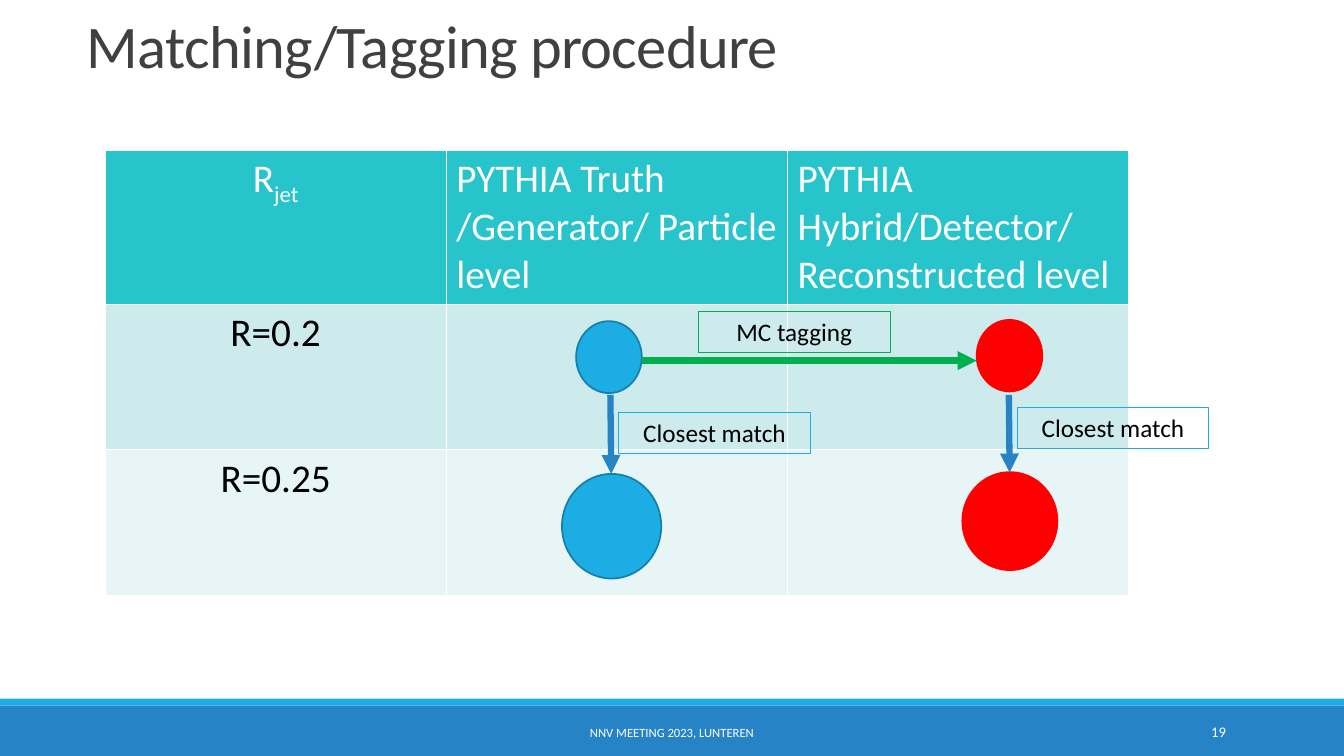
from pptx import Presentation
from pptx.dml.color import RGBColor
from pptx.enum.shapes import MSO_CONNECTOR, MSO_SHAPE
from pptx.enum.text import MSO_ANCHOR, MSO_AUTO_SIZE, PP_ALIGN
from pptx.oxml.ns import qn
from pptx.util import Pt
from lxml.etree import SubElement

WIDE, HIGH = 960, 540
FONT = "Calibri"
WHITE, BLACK, BLUE, SKY = "FFFFFF", "000000", "2683C6", "1CADE4"
RIM, RED, GREEN = "1580A9", "FF0000", "00B050"

TITLE = "Matching/Tagging procedure"
ROWS = [
    ("28C4CC", WHITE, ["R", "PYTHIA Truth /Generator/ Particle level",
                       "PYTHIA Hybrid/Detector/ Reconstructed level"]),
    ("CDEAEC", BLACK, ["R=0.2", "", ""]),
    ("E8F5F6", BLACK, ["R=0.25", "", ""]),
]
GRID = (75, 107.5, 243.8, 104)
BARS = [(504, 36, BLUE), (499, 5, SKY)]
JETS = [
    (411.5, 229.4, 46.9, 51.4, SKY, RIM),
    (401.4, 338.5, 70.9, 74.7, SKY, RIM),
    (697.6, 228.5, 46.9, 51.1, RED, RED),
    (687.4, 337.3, 67.9, 69.9, RED, RED),
]
ARROWS = [
    (720.6, 282, 721.2, 337.5, BLUE),
    (436, 282, 436.6, 338.5, BLUE),
    (458.5, 257.6, 697.6, 257.6, GREEN),
]
TAGS = [
    ("MC tagging", 498.8, 222.4, GREEN),
    ("Closest match", 441.9, 294.6, SKY),
    ("Closest match", 726.5, 291, SKY),
]
TAG_SIZE = (137, 29.1)
NOTES = [
    ("NNV MEETING 2023, LUNTEREN", 290.2, 379.4, 9, PP_ALIGN.CENTER),
    ("19", 779.8, 103, 10.5, PP_ALIGN.RIGHT),
]


def paint(part, color):
    part.solid()
    part.fore_color.rgb = RGBColor.from_string(color)


def style(frame, size, color, align=PP_ALIGN.LEFT):
    for para in frame.paragraphs:
        para.alignment = align
        for run in para.runs:
            font = run.font
            font.name, font.size, font.bold = FONT, Pt(size), False
            paint(font.fill, color)


def draw(kind, box, fill=None, line=None, width=1.25):
    shape = slide.shapes.add_shape(kind, *map(Pt, box))
    shape.shadow.inherit = False
    if fill:
        paint(shape.fill, fill)
    else:
        shape.fill.background()
    if line:
        paint(shape.line.fill, line)
        shape.line.width = Pt(width)
    else:
        shape.line.fill.background()
    return shape


deck = Presentation()
deck.slide_width, deck.slide_height = Pt(WIDE), Pt(HIGH)
slide = deck.slides.add_slide(deck.slide_layouts[5])

for top, high, color in BARS:
    draw(MSO_SHAPE.RECTANGLE, (0, top, WIDE, high), color)

title = slide.shapes.title
title.left, title.top, title.width, title.height = map(Pt, (54.7, 5.8, 792, 55.4))
frame = title.text_frame
frame.text = TITLE
frame.auto_size = MSO_AUTO_SIZE.NONE
frame.vertical_anchor = MSO_ANCHOR.BOTTOM
frame.paragraphs[0].line_spacing = 0.85
style(frame, 43.2, "404040")
frame.paragraphs[0].runs[0].font._element.set("spc", "-50")

left, top, wide, high = GRID
count = len(ROWS)
table = slide.shapes.add_table(count, 3, Pt(left), Pt(top), Pt(wide * 3), Pt(high * count)).table
for col in table.columns:
    col.width = Pt(wide)
for r, (fill, ink, texts) in enumerate(ROWS):
    table.rows[r].height = Pt(high)
    for c, text in enumerate(texts):
        cell = table.cell(r, c)
        paint(cell.fill, fill)
        if text:
            cell.text_frame.text = text
        if (r, c) == (0, 0):
            sub = cell.text_frame.paragraphs[0].add_run()
            sub.text = "jet"
            sub.font._element.set("baseline", "-25000")
        style(cell.text_frame, 28, ink, PP_ALIGN.LEFT if c else PP_ALIGN.CENTER)

for *box, fill, rim in JETS:
    draw(MSO_SHAPE.OVAL, box, fill, rim)

for *ends, color in ARROWS:
    arrow = slide.shapes.add_connector(MSO_CONNECTOR.STRAIGHT, *map(Pt, ends))
    paint(arrow.line.fill, color)
    arrow.line.width = Pt(4.5)
    SubElement(arrow.line._get_or_add_ln(), qn("a:tailEnd"), type="triangle")
    SubElement(arrow._element.spPr, qn("a:effectLst"))

for text, left, top, color in TAGS:
    tag = draw(MSO_SHAPE.RECTANGLE, (left, top, *TAG_SIZE), None, color, 0.75)
    tag.text_frame.text = text
    tag.text_frame.word_wrap = True
    tag.text_frame.vertical_anchor = MSO_ANCHOR.TOP
    style(tag.text_frame, 18, BLACK, PP_ALIGN.CENTER)

for text, left, wide, size, align in NOTES:
    note = slide.shapes.add_textbox(Pt(left), Pt(508.5), Pt(wide), Pt(28.8))
    frame = note.text_frame
    frame.text = text
    frame.word_wrap = True
    frame.vertical_anchor = MSO_ANCHOR.MIDDLE
    style(frame, size, WHITE, align)

deck.save("out.pptx")
